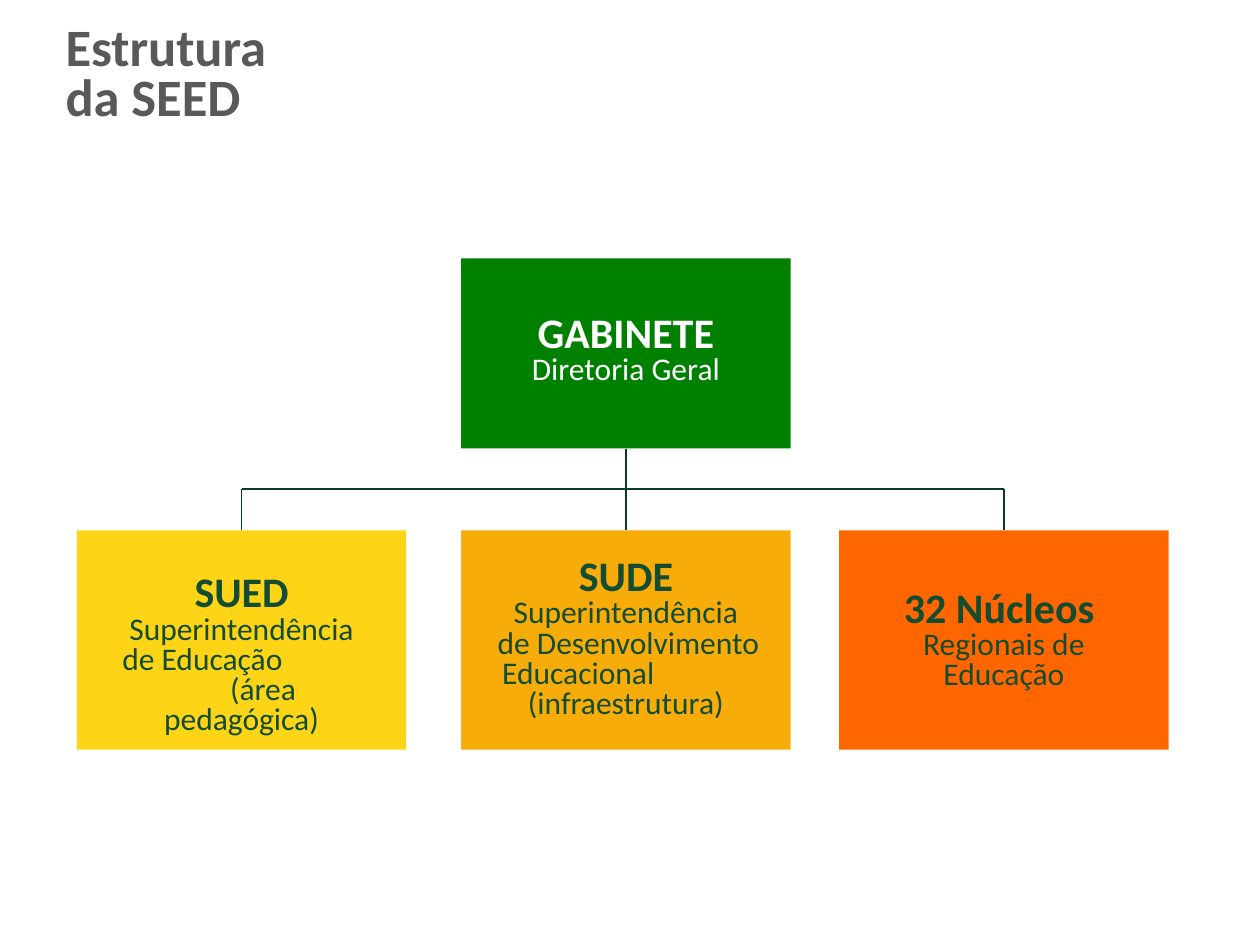
from lxml import etree
from pptx import Presentation
from pptx.dml.color import RGBColor
from pptx.enum.shapes import MSO_CONNECTOR, MSO_SHAPE
from pptx.enum.text import MSO_ANCHOR, PP_ALIGN
from pptx.oxml.ns import qn
from pptx.util import Inches, Pt

GREY = RGBColor(0x59, 0x59, 0x59)
WHITE = RGBColor(0xFF, 0xFF, 0xFF)
DARK = RGBColor(0x13, 0x4C, 0x30)
LINE = RGBColor(0x0A, 0x3C, 0x23)
GREEN = RGBColor(0x00, 0x80, 0x00)
YELLOW = RGBColor(0xFE, 0xD4, 0x17)
AMBER = RGBColor(0xF8, 0xAC, 0x09)
ORANGE = RGBColor(0xFF, 0x66, 0x00)

COLS, ROWS = 100, 75
BOX_W, TOP_H, UNIT_H = 26.15, 15.1, 17.4
TOP_Y, BUS_Y, UNIT_Y = 20.5, 38.8, 42.1
LEFT_X, MID_X, RIGHT_X = 6.1, 36.6, 66.6

HEAD = {"size": Pt(24), "bold": True, "name": "Calibri"}
BODY = {"size": Pt(18), "bold": False, "name": "Calibri"}
TITLE = {"size": Pt(30), "bold": True, "name": "Calibri"}


class Chart:
    """Organisation chart on a grid of COLS by ROWS cells."""

    def __init__(self, prs):
        self.cell_w = prs.slide_width / COLS
        self.cell_h = prs.slide_height / ROWS
        self.s = prs.slides.add_slide(prs.slide_layouts[5])

    def x(self, cols):
        return round(cols * self.cell_w)

    def y(self, rows):
        return round(rows * self.cell_h)

    def area(self, x, y, w, h):
        return self.x(x), self.y(y), self.x(w), self.y(h)

    def fill_paragraph(self, p, text, style, color, align):
        p.text = text
        p.alignment, p.line_spacing = align, 0.8
        for r in p.runs:
            for key, value in style.items():
                setattr(r.font, key, value)
            r.font.color.rgb = color

    def title(self, text, *area):
        sp = self.s.shapes.title
        sp.left, sp.top, sp.width, sp.height = self.area(*area)
        sp.text_frame.vertical_anchor = MSO_ANCHOR.MIDDLE
        self.fill_paragraph(sp.text_frame.paragraphs[0], text, TITLE, GREY, PP_ALIGN.LEFT)

    def box(self, x, y, h, fill):
        sp = self.s.shapes.add_shape(MSO_SHAPE.RECTANGLE, *self.area(x, y, BOX_W, h))
        sp.shadow.inherit = False
        sp.fill.solid()
        sp.fill.fore_color.rgb = fill
        sp.line.fill.background()
        return sp

    def label(self, x, y, w, h, color, head, lines):
        """Heading above body lines, each given as (text, alignment, indent in columns)."""
        tf = self.s.shapes.add_textbox(*self.area(x, y, w, h)).text_frame
        tf.word_wrap = True
        self.fill_paragraph(tf.paragraphs[0], head, HEAD, color, PP_ALIGN.CENTER)
        for text, align, indent in lines:
            p = tf.add_paragraph()
            self.fill_paragraph(p, text, BODY, color, align)
            if indent:
                p._p.get_or_add_pPr().set("marL", str(self.x(indent)))

    def line(self, x1, y1, x2, y2, start=None, end=None):
        c = self.s.shapes.add_connector(
            MSO_CONNECTOR.STRAIGHT, self.x(x1), self.y(y1), self.x(x2), self.y(y2))
        if start:
            c.begin_connect(*start)
        if end:
            c.end_connect(*end)
        c.line.color.rgb, c.line.width = LINE, Pt(1)
        etree.SubElement(c._element.spPr, qn("a:effectLst"))


def main():
    prs = Presentation()
    prs.slide_width, prs.slide_height = Inches(10), Inches(7.5)
    chart = Chart(prs)
    chart.title("Estrutura\vda SEED", 4.2, 1.1, 30.9, 9.9)

    cabinet = chart.box(MID_X, TOP_Y, TOP_H, GREEN)
    sued, sude, regional = [
        chart.box(x, UNIT_Y, UNIT_H, fill)
        for x, fill in ((LEFT_X, YELLOW), (MID_X, AMBER), (RIGHT_X, ORANGE))]

    left, mid, right = [x + BOX_W / 2 for x in (LEFT_X, MID_X, RIGHT_X)]
    chart.line(mid, TOP_Y + TOP_H, mid, UNIT_Y, (cabinet, 2), (sude, 0))
    for center, unit in ((left, sued), (right, regional)):
        chart.line(mid, BUS_Y, center, BUS_Y)
        chart.line(center, UNIT_Y, center, BUS_Y, (unit, 0))

    mc, ml = PP_ALIGN.CENTER, PP_ALIGN.LEFT
    labels = [
        (mid, 24.6, 23.8, 6.8, WHITE, "GABINETE", [("Diretoria Geral", mc, 0)]),
        (left, 45.2, 20.9, 11.6, DARK, "SUED", [
            ("Superintendência", mc, 0), ("de Educação", ml, 0),
            ("(área", mc, 3.4), ("pedagógica)", mc, 0)]),
        (mid, 43.9, 23.8, 14, DARK, "SUDE", [
            ("Superintendência", mc, 0), ("de Desenvolvimento", mc, 0.4),
            ("Educacional", ml, 1.1), ("(infraestrutura)", mc, 0)]),
        (right, 46.4, 23.8, 9.2, DARK, "32 Núcleos ", [
            ("Regionais de Educação", mc, 0)]),
    ]
    for center, y, w, *rest in labels:
        chart.label(center - w / 2, y, w, *rest)

    prs.save("out.pptx")


if __name__ == "__main__":
    main()
